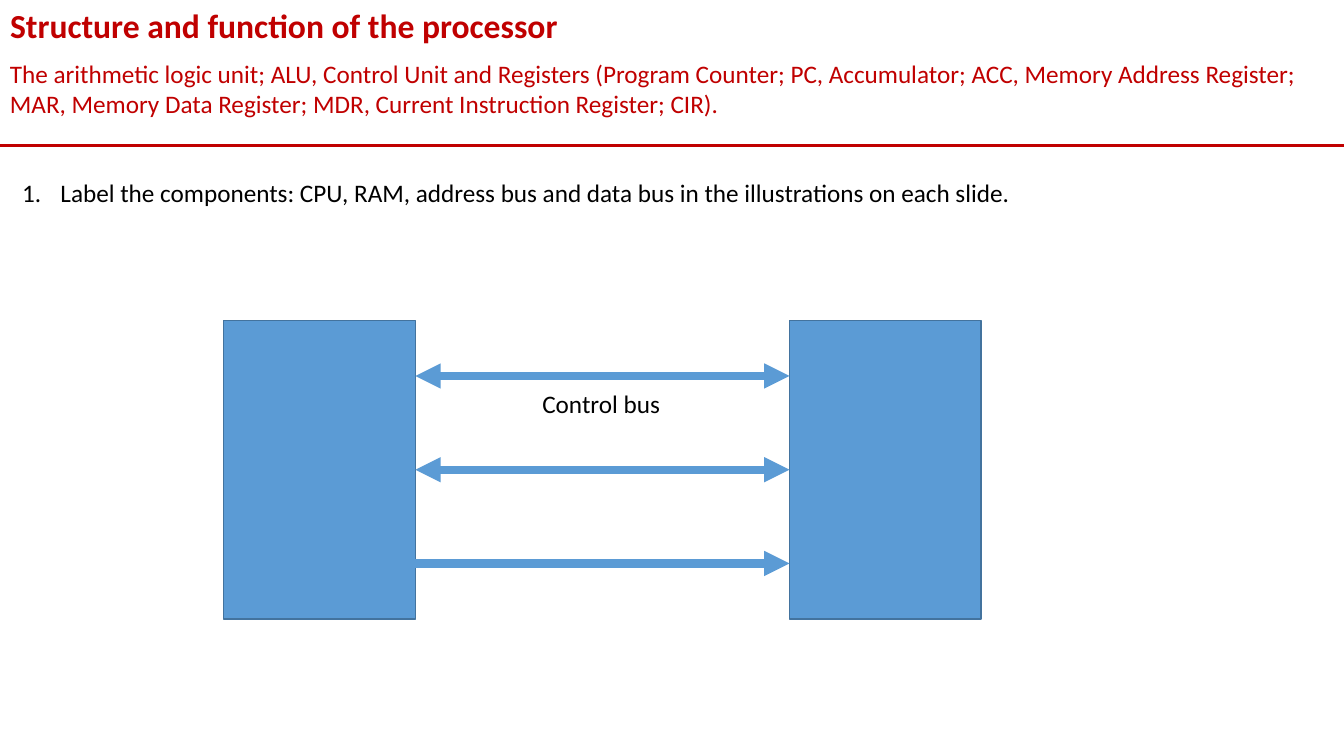
from lxml import etree
from pptx import Presentation
from pptx.dml.color import RGBColor
from pptx.enum.shapes import MSO_CONNECTOR, MSO_SHAPE
from pptx.enum.text import MSO_ANCHOR, MSO_AUTO_SIZE, PP_ALIGN
from pptx.oxml.ns import qn
from pptx.util import Inches, Pt

RED = RGBColor(0xC0, 0x00, 0x00)
BLACK = RGBColor(0x00, 0x00, 0x00)
BLUE = RGBColor(0x5B, 0x9B, 0xD5)
EDGE = RGBColor(0x43, 0x73, 0x9E)
WIDTH, HEIGHT = 13.33, 7.5


def put_text(shape, box, text, color, size=18, bold=False, wrap=True):
    """Place a text shape at box (left, top, width, height) and fill it."""
    shape.left, shape.top, shape.width, shape.height = map(Inches, box)
    frame = shape.text_frame
    frame.text = text
    frame.word_wrap = wrap
    frame.auto_size = MSO_AUTO_SIZE.SHAPE_TO_FIT_TEXT
    frame.vertical_anchor = MSO_ANCHOR.TOP
    para = frame.paragraphs[0]
    para.alignment = PP_ALIGN.LEFT
    para.space_before = Pt(0)
    return para


def style(para, color, size=18, bold=False):
    font = para.font
    font.name, font.size, font.bold = "Calibri", Pt(size), bold
    font.color.rgb = color


def add_line(slide, start, end, color, weight, heads=()):
    """Draw a straight line; heads names its arrow ends (headEnd, tailEnd)."""
    line = slide.shapes.add_connector(
        MSO_CONNECTOR.STRAIGHT, *map(Inches, (*start, *end)))
    line.line.color.rgb = color
    line.line.width = Pt(weight)
    for head in heads:
        etree.SubElement(line.line._get_or_add_ln(), qn(f"a:{head}"),
                         type="triangle")
    etree.SubElement(line._element.spPr, qn("a:effectLst"))
    return line


def add_header(slide, left, top, width, height):
    title = put_text(slide.shapes.title, (left, top, width, 0.5),
                     "Structure and function of the processor", RED)
    style(title, RED, 24, True)
    box = slide.shapes.add_textbox(0, 0, 0, 0)
    topic = put_text(
        box, (left, top + 0.53, width, 0.71),
        "The arithmetic logic unit; ALU, Control Unit and Registers "
        "(Program Counter; PC, Accumulator; ACC, Memory Address Register; "
        "MAR, Memory Data Register; MDR, Current Instruction Register; CIR).",
        RED)
    style(topic, RED)
    base = top + height
    add_line(slide, (left, base), (left + width, base), RED, 2.25)


def add_task(slide, *box):
    task = put_text(
        slide.placeholders[1], box,
        "Label the components: CPU, RAM, address bus and data bus "
        "in the illustrations on each slide.", BLACK, wrap=False)
    props = task._p.get_or_add_pPr()
    indent = Inches(0.38)
    props.set("marL", str(indent))
    props.set("indent", str(-indent))
    etree.SubElement(props, qn("a:buFont"), typeface="+mj-lt")
    etree.SubElement(props, qn("a:buAutoNum"), type="arabicPeriod")
    style(task, BLACK)


def add_block(slide, *box):
    block = slide.shapes.add_shape(MSO_SHAPE.RECTANGLE, *map(Inches, box))
    block.shadow.inherit = False
    block.fill.solid()
    block.fill.fore_color.rgb = BLUE
    block.line.color.rgb = EDGE
    block.line.width = Pt(1)
    return block


def add_buses(slide, left, top, width, height):
    """Draw two blocks linked by three evenly spaced buses."""
    side, step = 1.9, 0.93
    start, end = left + side, left + width - side
    middle = top + height / 2
    first = add_block(slide, left, top, side, height)
    second = add_block(slide, end, top, side, height)
    both = ("headEnd", "tailEnd")
    for row, heads in ((-1, both), (0, both), (1, ("tailEnd",))):
        y = middle + row * step
        bus = add_line(slide, (start, y), (end, y), BLUE, 6, heads)
        if row == 0:
            bus.begin_connect(first, 3)
            bus.end_connect(second, 1)
    label = put_text(slide.shapes.add_textbox(0, 0, 0, 0),
                     (left + 3.06, top + 0.62, 1.38, 0.4),
                     "Control bus", BLACK, wrap=False)
    style(label, BLACK)


def main():
    deck = Presentation()
    deck.slide_width, deck.slide_height = Inches(WIDTH), Inches(HEIGHT)
    slide = deck.slides.add_slide(deck.slide_layouts[1])
    add_header(slide, 0, 0, WIDTH, 1.44)
    add_task(slide, 0.12, 1.71, 10.05, 0.4)
    add_buses(slide, 2.22, 3.18, 7.51, 2.96)
    deck.save("out.pptx")


if __name__ == "__main__":
    main()
